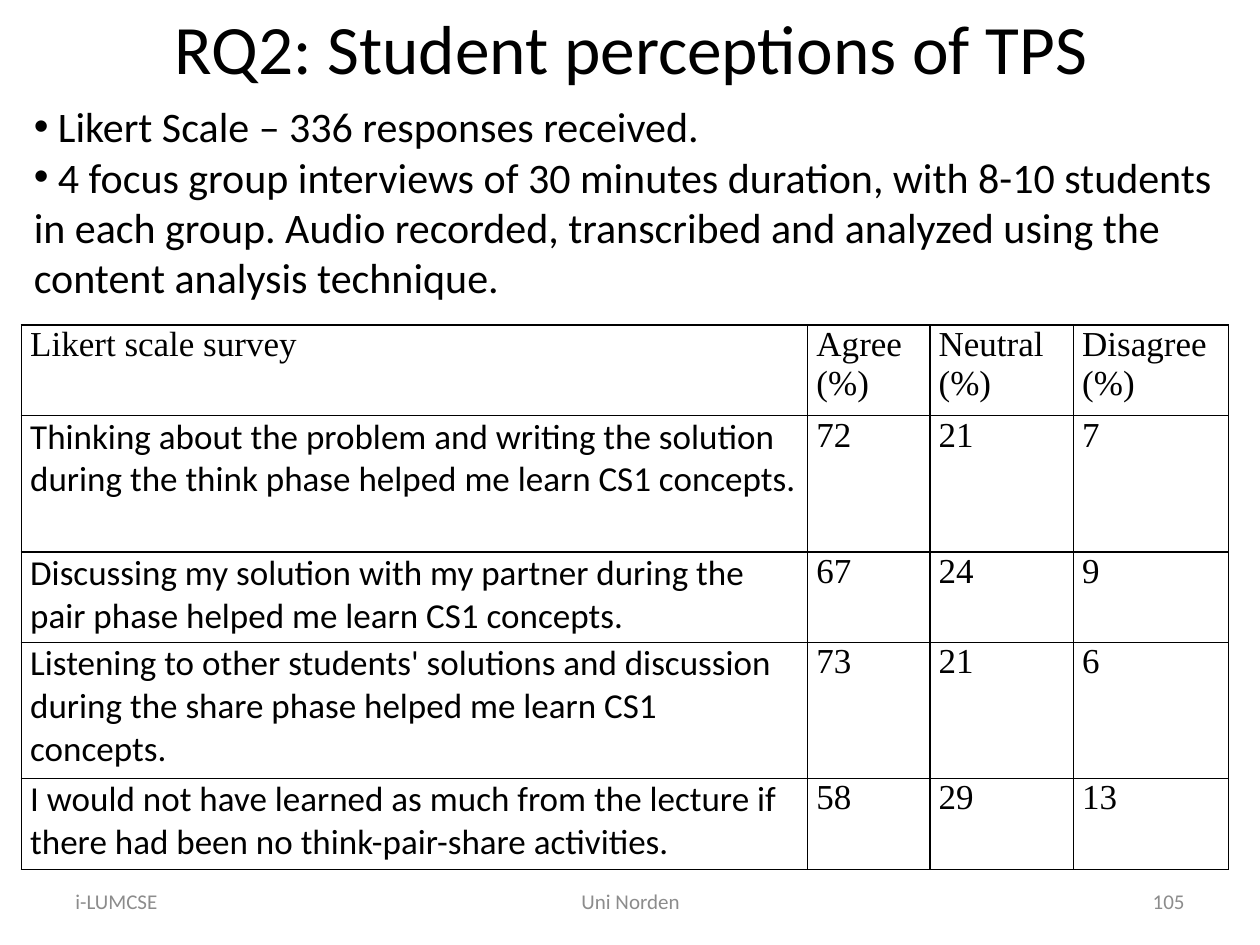
from lxml.etree import SubElement
from pptx import Presentation
from pptx.dml.color import RGBColor
from pptx.enum.text import MSO_ANCHOR, PP_ALIGN
from pptx.oxml import parse_xml
from pptx.oxml.ns import nsdecls, qn
from pptx.util import Inches, Pt

BLACK = "000000"
GRAY = "8C8C8C"


def add_run(paragraph, text, size, color=BLACK, font="Calibri"):
    run = paragraph.add_run()
    run.text = text
    run.font.size = Pt(size)
    run.font.name = font
    run.font.color.rgb = RGBColor.from_string(color)


def add_borders(cell):
    properties = cell._tc.get_or_add_tcPr()
    for index, side in enumerate(("lnL", "lnR", "lnT", "lnB")):
        line = parse_xml(
            f'<a:{side} {nsdecls("a")} w="12700"><a:solidFill>'
            f'<a:srgbClr val="{BLACK}"/></a:solidFill></a:{side}>'
        )
        properties.insert(index, line)


presentation = Presentation()
presentation.slide_width = Inches(10)
presentation.slide_height = Inches(7.5)
slide = presentation.slides.add_slide(presentation.slide_layouts[5])

# Title
title = slide.shapes.title
title.left, title.top = Inches(0.51), Inches(0)
title.width, title.height = Inches(9), Inches(0.75)
title.text_frame.vertical_anchor = MSO_ANCHOR.MIDDLE
paragraph = title.text_frame.paragraphs[0]
paragraph.alignment = PP_ALIGN.CENTER
add_run(paragraph, "RQ2: Student perceptions of TPS", 39.6)

# Survey table
survey_rows = [
    ("Likert scale survey", "Agree (%)", "Neutral (%)", "Disagree (%)"),
    ("Thinking about the problem and writing the solution during the think "
     "phase helped me learn CS1 concepts.", "72", "21", "7"),
    ("Discussing my solution with my partner during the pair phase helped me "
     "learn CS1 concepts.", "67", "24", "9"),
    ("Listening to other students' solutions and discussion during the share "
     "phase helped me learn CS1 concepts.", "73", "21", "6"),
    ("I would not have learned as much from the lecture if there had been no "
     "think-pair-share activities.", "58", "29", "13"),
]
column_widths = [6.24, 0.97, 1.14, 1.23]
row_heights = [0.72, 1.08, 0.72, 1.08, 0.72]
table = slide.shapes.add_table(
    len(survey_rows), len(column_widths),
    Inches(0.17), Inches(2.58), Inches(9.58), Inches(4.33),
).table
for column, width in zip(table.columns, column_widths):
    column.width = Inches(width)
for row, height in zip(table.rows, row_heights):
    row.height = Inches(height)
for row_index, values in enumerate(survey_rows):
    for column_index, value in enumerate(values):
        cell = table.cell(row_index, column_index)
        cell.margin_left = cell.margin_right = Inches(0.07)
        cell.margin_top = cell.margin_bottom = Inches(0)
        cell.fill.background()
        add_borders(cell)
        is_statement = row_index > 0 and column_index == 0
        font = "Calibri" if is_statement else "Times New Roman"
        paragraph = cell.text_frame.paragraphs[0]
        add_run(paragraph, value, 20, font=font)
        paragraph.runs[0].font.bold = False

# Bulleted summary
summary = slide.shapes.add_textbox(
    Inches(0.17), Inches(0.75), Inches(9.83), Inches(1.72)
).text_frame
summary.word_wrap = True
bullets = [
    " Likert Scale – 336 responses received.",
    " 4 focus group interviews of 30 minutes duration, with 8-10 students in "
    "each group. Audio recorded, transcribed and analyzed using the content "
    "analysis technique.",
]
for index, text in enumerate(bullets):
    paragraph = summary.add_paragraph() if index else summary.paragraphs[0]
    properties = paragraph._p.get_or_add_pPr()
    SubElement(properties, qn("a:buFont"), typeface="Arial")
    SubElement(properties, qn("a:buChar"), char="•")
    add_run(paragraph, text, 24)

# Footer
footers = [
    ("i-LUMCSE", 0.5, 2.33, PP_ALIGN.LEFT),
    ("Uni Norden", 3.42, 3.17, PP_ALIGN.CENTER),
    ("105", 7.17, 2.33, PP_ALIGN.RIGHT),
]
for text, left, width, alignment in footers:
    footer = slide.shapes.add_textbox(
        Inches(left), Inches(6.95), Inches(width), Inches(0.4)
    ).text_frame
    footer.word_wrap = True
    footer.vertical_anchor = MSO_ANCHOR.MIDDLE
    paragraph = footer.paragraphs[0]
    paragraph.alignment = alignment
    add_run(paragraph, text, 12, GRAY)

presentation.save("out.pptx")
